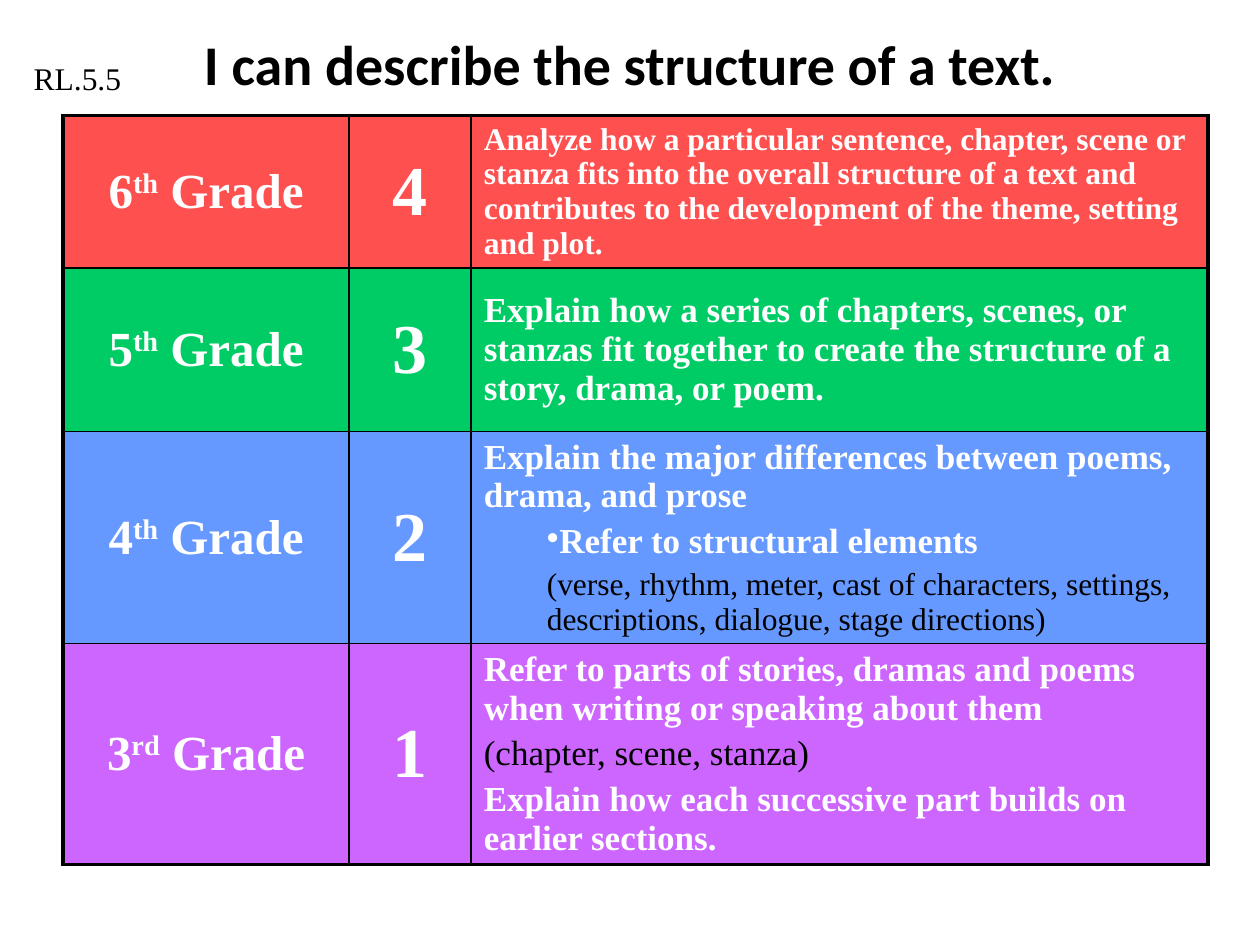
from lxml import etree
from pptx import Presentation
from pptx.dml.color import RGBColor
from pptx.enum.text import MSO_ANCHOR, PP_ALIGN
from pptx.oxml.ns import qn
from pptx.util import Cm, Pt

CENTER, LEFT = PP_ALIGN.CENTER, PP_ALIGN.LEFT
MIDDLE = MSO_ANCHOR.MIDDLE
BLACK = RGBColor(0x00, 0x00, 0x00)
WHITE = RGBColor(0xFF, 0xFF, 0xFF)
RED = RGBColor(0xFF, 0x50, 0x50)
GREEN = RGBColor(0x00, 0xCC, 0x66)
BLUE = RGBColor(0x66, 0x99, 0xFF)
PURPLE = RGBColor(0xCC, 0x66, 0xFF)
SERIF = "Times New Roman"

# Each row: number, ordinal ending, score, fill, height in cm,
# top, inner and bottom line widths, then paragraphs (text, size, bold, level, bullet)
GRADES = [
    ("6", "th", "4", RED, 2.79, (2.25, 1, 1.5), [
        ("Analyze how a particular sentence, chapter, scene or stanza fits into the "
         "overall structure of a text and contributes to the development of the theme, "
         "setting and plot.", 18, True, 0, False)]),
    ("5", "th", "3", GREEN, 3.3, (1.5, 1, 1), [
        ("Explain how a series of chapters, scenes, or stanzas fit together to create "
         "the structure of a story, drama, or poem.", 20, True, 0, False)]),
    ("4", "th", "2", BLUE, 2.79, (1, 1.5, 1), [
        ("Explain the major differences between poems, drama, and prose", 20, True, 0, False),
        ("Refer to structural elements", 20, True, 1, True),
        ("(verse, rhythm, meter, cast of characters, settings, descriptions, dialogue, "
         "stage directions)", 18, False, 1, False)]),
    ("3", "rd", "1", PURPLE, 2.79, (1, 1, 1.5), [
        ("Refer to parts of stories, dramas and poems when writing or speaking about them",
         20, True, 0, False),
        ("(chapter, scene, stanza)", 20, False, 0, False),
        ("Explain how each successive part builds on earlier sections.",
         20, True, 0, False)]),
]


def format_paragraph(para, size, bold=True, align=CENTER):
    para.alignment = align
    properties = para._p.get_or_add_pPr()
    spacing = etree.SubElement(properties, qn("a:spcBef"))
    etree.SubElement(spacing, qn("a:spcPct")).set("val", "20000")
    for span in para.runs:
        span.font.name = SERIF
        span.font.size = Pt(size)
        span.font.bold = bold
        span.font.color.rgb = WHITE if bold else BLACK


def add_border(cell, side, width):
    line = etree.SubElement(cell._tc.get_or_add_tcPr(), qn(f"a:ln{side}"))
    line.set("w", str(Pt(width)))
    fill = etree.SubElement(line, qn("a:solidFill"))
    etree.SubElement(fill, qn("a:srgbClr")).set("val", str(BLACK))


deck = Presentation()
deck.slide_width, deck.slide_height = Cm(25.4), Cm(19.05)
slide = deck.slides.add_slide(deck.slide_layouts[5])

# Title
title = slide.shapes.title
title.left, title.top, title.width, title.height = Cm(0.85), Cm(0), Cm(23.7), Cm(2.54)
title.text_frame.text = "I can describe the structure of a text."
title.text_frame.vertical_anchor = MIDDLE
title_para = title.text_frame.paragraphs[0]
title_para.alignment = CENTER
title_font = title_para.runs[0].font
title_font.name, title_font.size, title_font.bold = "Calibri", Pt(32), True
title_font.color.rgb = BLACK

# Rubric table
frame = slide.shapes.add_table(len(GRADES), 3, Cm(1.27), Cm(2.33), Cm(23.06), Cm(16.08))
table = frame.table
table.first_row = table.horz_banding = False
for column, width in zip(table.columns, (5.77, 2.46, 14.85)):
    column.width = Cm(width)

for row, grade in enumerate(GRADES):
    number, ending, score, color, height, (top, inner, bottom), lines = grade
    table.rows[row].height = Cm(height)
    cells = [table.cell(row, column) for column in range(3)]
    grade_cell, score_cell, description_cell = cells

    # Grade name with raised ordinal ending
    grade_para = grade_cell.text_frame.paragraphs[0]
    for text in (number, ending, " Grade"):
        grade_para.add_run().text = text
    format_paragraph(grade_para, 28)
    grade_para.runs[1]._r.get_or_add_rPr().set("baseline", "30000")

    # Score
    score_cell.text_frame.text = score
    format_paragraph(score_cell.text_frame.paragraphs[0], 40)

    # Description
    description = description_cell.text_frame
    description.text = "\n".join(line[0] for line in lines)
    for para, (_, size, bold, level, bullet) in zip(description.paragraphs, lines):
        format_paragraph(para, size, bold, LEFT)
        if level:
            para.level = level
            properties = para._p.get_or_add_pPr()
            properties.set("marL", str(Cm(1.27)))
            properties.set("indent", "0")
            if bullet:
                etree.SubElement(properties, qn("a:buChar")).set("char", "•")

    # Borders and fill
    for column, cell in enumerate(cells):
        cell.vertical_anchor = MIDDLE
        add_border(cell, "L", 2.25 if column == 0 else inner)
        add_border(cell, "R", 2.25 if column == 2 else inner)
        add_border(cell, "T", top)
        add_border(cell, "B", bottom)
        cell.fill.solid()
        cell.fill.fore_color.rgb = color

frame.height = Cm(16.08)

# Standard code
code = slide.shapes.add_textbox(Cm(0.43), Cm(1.07), Cm(3.6), Cm(1.02))
code.text_frame.word_wrap = True
code.text_frame.text = "RL.5.5"
code_font = code.text_frame.paragraphs[0].runs[0].font
code_font.name, code_font.size = SERIF, Pt(18)
code_font.color.rgb = BLACK

deck.save("out.pptx")
